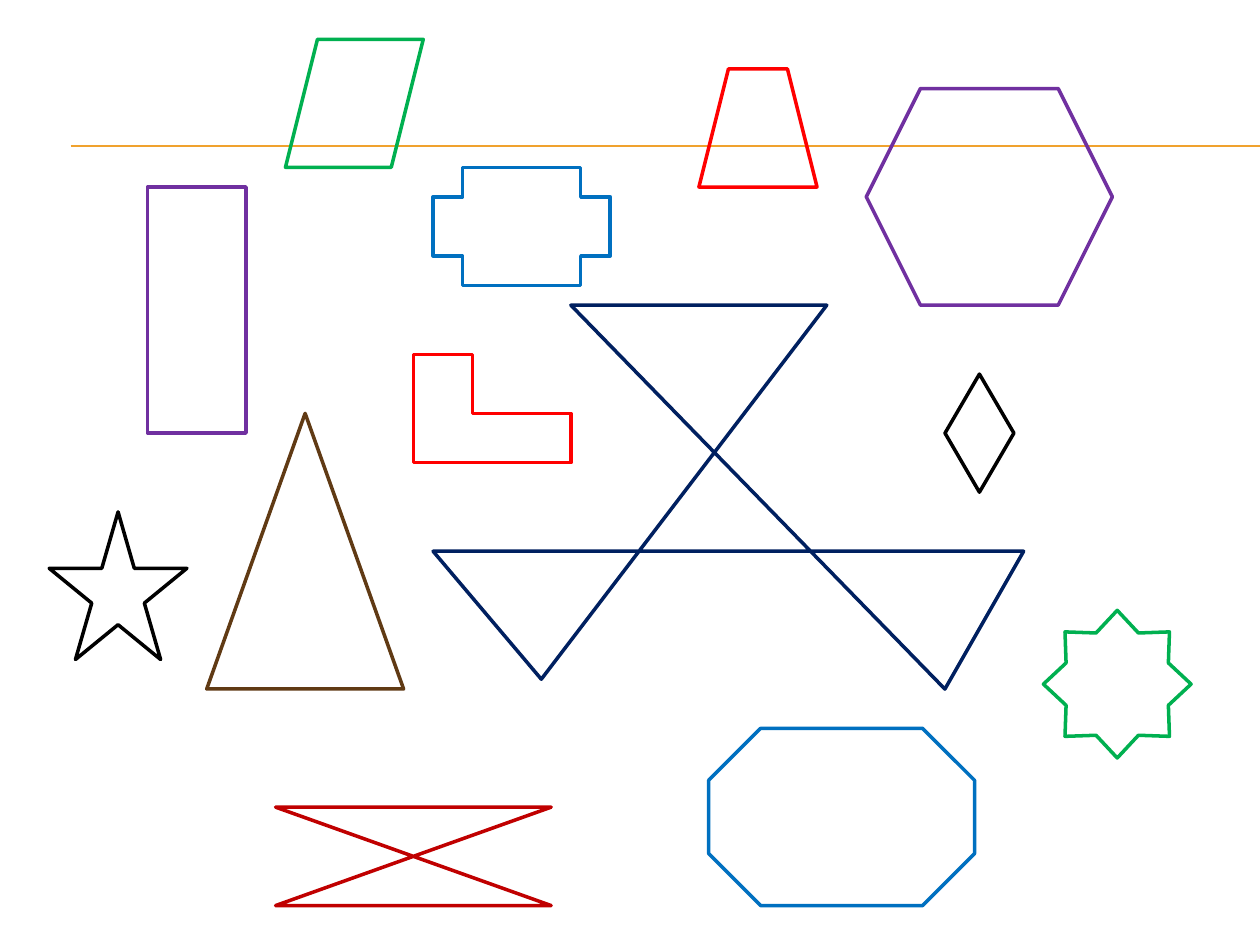
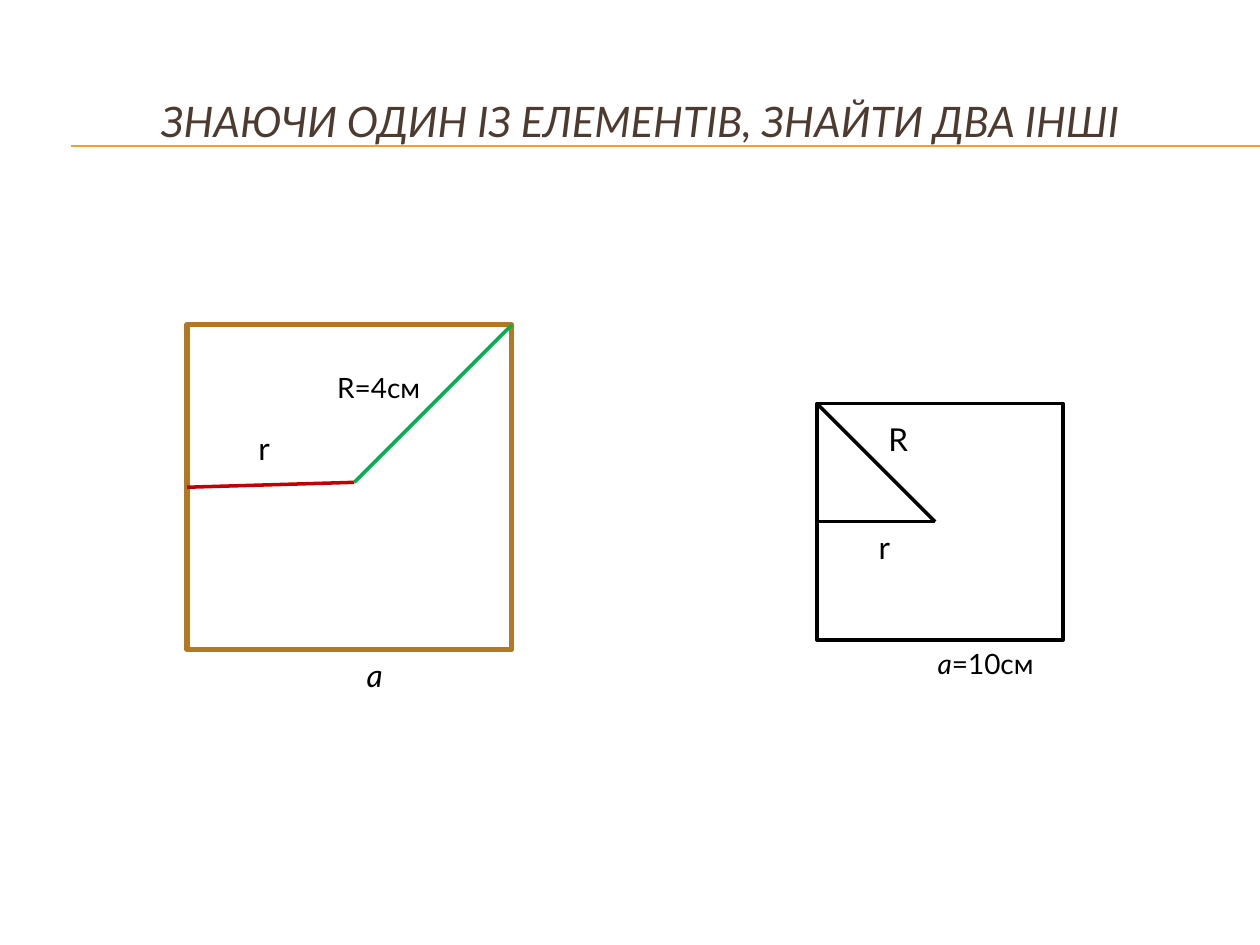
"""Builds two geometry slides: a set of outlined figures and a task on squares."""
from dataclasses import dataclass

from lxml import etree
from pptx import Presentation
from pptx.dml.color import RGBColor
from pptx.enum.shapes import MSO_CONNECTOR, MSO_SHAPE
from pptx.enum.text import MSO_ANCHOR, MSO_AUTO_SIZE, PP_ALIGN
from pptx.oxml.ns import qn
from pptx.util import Inches, Pt

STRAIGHT = MSO_CONNECTOR.STRAIGHT
RECTANGLE = MSO_SHAPE.RECTANGLE
MIDDLE = MSO_ANCHOR.MIDDLE
CENTER = PP_ALIGN.CENTER
GROW = MSO_AUTO_SIZE.SHAPE_TO_FIT_TEXT
TITLE_ONLY = 5
SLIDE_WIDTH, SLIDE_HEIGHT = Inches(10), Inches(7.5)
CELL = SLIDE_WIDTH / 128


@dataclass(frozen=True)
class Theme:
    """Colours, font, type sizes and line widths of the presentation."""
    font: str = "Lato"
    black: str = "000000"
    purple: str = "7030A0"
    brown: str = "603A14"
    navy: str = "002060"
    blue: str = "0070C0"
    green: str = "00B050"
    red: str = "FF0000"
    dark_red: str = "C00000"
    ochre: str = "B27822"
    rule: str = "F0A22E"
    title: str = "4E3B30"
    title_size: int = 24
    label_size: int = 18
    value_size: int = 16
    rule_width: float = 0.75
    outline_width: float = 2
    frame_width: float = 3


THEME = Theme()


def cells(*counts):
    """Turn counts of grid cells into lengths."""
    return [round(count * CELL) for count in counts]


def style_line(line, color, width):
    """Set the colour and width of a line."""
    line.color.rgb = RGBColor.from_string(color)
    line.width = Pt(width)


def style_outline(shape, color, width=THEME.outline_width):
    """Leave a shape unfilled, with a plain outline."""
    shape.shadow.inherit = False
    shape.fill.background()
    style_line(shape.line, color, width)


def add_figure(slide, kind, box, color, width=THEME.outline_width):
    """Add an outlined preset shape on the grid."""
    shape = slide.shapes.add_shape(kind, *cells(*box))
    style_outline(shape, color, width)


def add_polygon(slide, points, color):
    """Add a closed outline through grid points."""
    builder = slide.shapes.build_freeform(*points[0], scale=CELL)
    builder.add_line_segments(points[1:], close=True)
    style_outline(builder.convert_to_shape(), color)


def add_line(slide, start, end, color, width=THEME.outline_width):
    """Add a straight line between grid points."""
    connector = slide.shapes.add_connector(STRAIGHT, *cells(*start, *end))
    style_line(connector.line, color, width)
    etree.SubElement(connector.element.spPr, qn("a:effectLst"))
    return connector


def add_run(paragraph, text, size, color=THEME.black, italic=False):
    """Append a formatted run to a paragraph."""
    run = paragraph.add_run()
    run.text = text
    run.font.name = THEME.font
    run.font.size = Pt(size)
    run.font.italic = italic
    run.font.color.rgb = RGBColor.from_string(color)


def add_label(slide, box, size, *runs):
    """Add a label made of (text, italic) runs."""
    frame = slide.shapes.add_textbox(*cells(*box)).text_frame
    frame.word_wrap = True
    frame.auto_size = GROW
    for text, italic in runs:
        add_run(frame.paragraphs[0], text, size, italic=italic)


def set_title(slide, text):
    """Place and fill the title placeholder."""
    title = slide.shapes.title
    title.left, title.top = Inches(0.33), Inches(0.5)
    title.width, title.height = Inches(9.5), Inches(0.92)
    frame = title.text_frame
    frame.vertical_anchor = MIDDLE
    paragraph = frame.paragraphs[0]
    paragraph.alignment = CENTER
    add_run(paragraph, text, THEME.title_size, THEME.title, italic=True)


def move_rules_to_master(presentation, slide):
    """Give the slide master the double rule under the title."""
    for row in (14.75, 14.85):
        rule = add_line(slide, (7.2, row), (128, row), THEME.rule, THEME.rule_width)
        presentation.slide_master.shapes.element.append(rule.element)


def build_figures(slide):
    """Fill the slide of outlined figures."""
    title = slide.shapes.title.element
    title.getparent().remove(title)
    add_figure(slide, RECTANGLE, (15, 19, 10, 25), THEME.purple)
    add_figure(slide, MSO_SHAPE.ISOSCELES_TRIANGLE, (21, 42, 20, 28), THEME.brown)
    crossed_triangles = [(57.8, 31), (96.4, 69.8), (104.5, 55.7),
                         (44, 55.5), (54.9, 69.4), (84.2, 31.4), (58.2, 31.2)]
    add_polygon(slide, crossed_triangles, THEME.navy)
    corner = [(42, 36), (47.5, 36), (47.5, 41.5), (58, 41.5), (58, 47), (42, 47)]
    add_polygon(slide, corner, THEME.red)
    figures = [
        (MSO_SHAPE.CROSS, (44, 17, 18, 12), THEME.blue),
        (MSO_SHAPE.HEXAGON, (88, 9, 25, 22), THEME.purple),
        (MSO_SHAPE.PARALLELOGRAM, (29, 4, 14, 13), THEME.green),
        (MSO_SHAPE.OCTAGON, (72, 74, 27, 18), THEME.blue),
        (MSO_SHAPE.STAR_5_POINT, (5, 52, 14, 15), THEME.black),
        (MSO_SHAPE.TRAPEZOID, (71, 7, 12, 12), THEME.red),
        (MSO_SHAPE.DIAMOND, (96, 38, 7, 12), THEME.black),
        (MSO_SHAPE.STAR_8_POINT, (106, 62, 15, 15), THEME.green),
        (MSO_SHAPE.FLOWCHART_COLLATE, (28, 82, 28, 10), THEME.dark_red),
    ]
    for kind, box, color in figures:
        add_figure(slide, kind, box, color)


def build_squares(slide):
    """Fill the slide with the task on two squares."""
    set_title(slide, "ЗНАЮЧИ ОДИН ІЗ ЕЛЕМЕНТІВ, ЗНАЙТИ ДВА ІНШІ")

    large_center = (36, 49)
    add_figure(slide, RECTANGLE, (19, 33, 33, 33), THEME.ochre, THEME.frame_width)
    add_line(slide, large_center, (19, 49.5), THEME.dark_red)
    add_line(slide, large_center, (52, 33), THEME.green)
    add_label(slide, (25, 43, 5, 5.1), THEME.label_size, ("r", False))
    add_label(slide, (33, 37, 11, 4.7), THEME.value_size, ("R=4см", False))
    add_label(slide, (36, 66, 8, 5.1), THEME.label_size, ("а", True))

    small_center = (95, 53)
    add_figure(slide, RECTANGLE, (83, 41, 25, 24), THEME.black)
    add_line(slide, (83, 41), small_center, THEME.black)
    add_line(slide, small_center, (83, 53), THEME.black)
    add_label(slide, (94, 65, 14, 4.7), THEME.value_size, ("а", True), ("=10см", False))
    add_label(slide, (89, 42, 5, 5.1), THEME.label_size, ("R", False))
    add_label(slide, (88, 53, 4, 5.1), THEME.label_size, ("r", False))


def main():
    """Build and save the presentation."""
    presentation = Presentation()
    presentation.slide_width, presentation.slide_height = SLIDE_WIDTH, SLIDE_HEIGHT
    layout = presentation.slide_layouts[TITLE_ONLY]
    figures_slide = presentation.slides.add_slide(layout)
    move_rules_to_master(presentation, figures_slide)
    build_figures(figures_slide)
    build_squares(presentation.slides.add_slide(layout))
    presentation.save("out.pptx")


if __name__ == "__main__":
    main()
